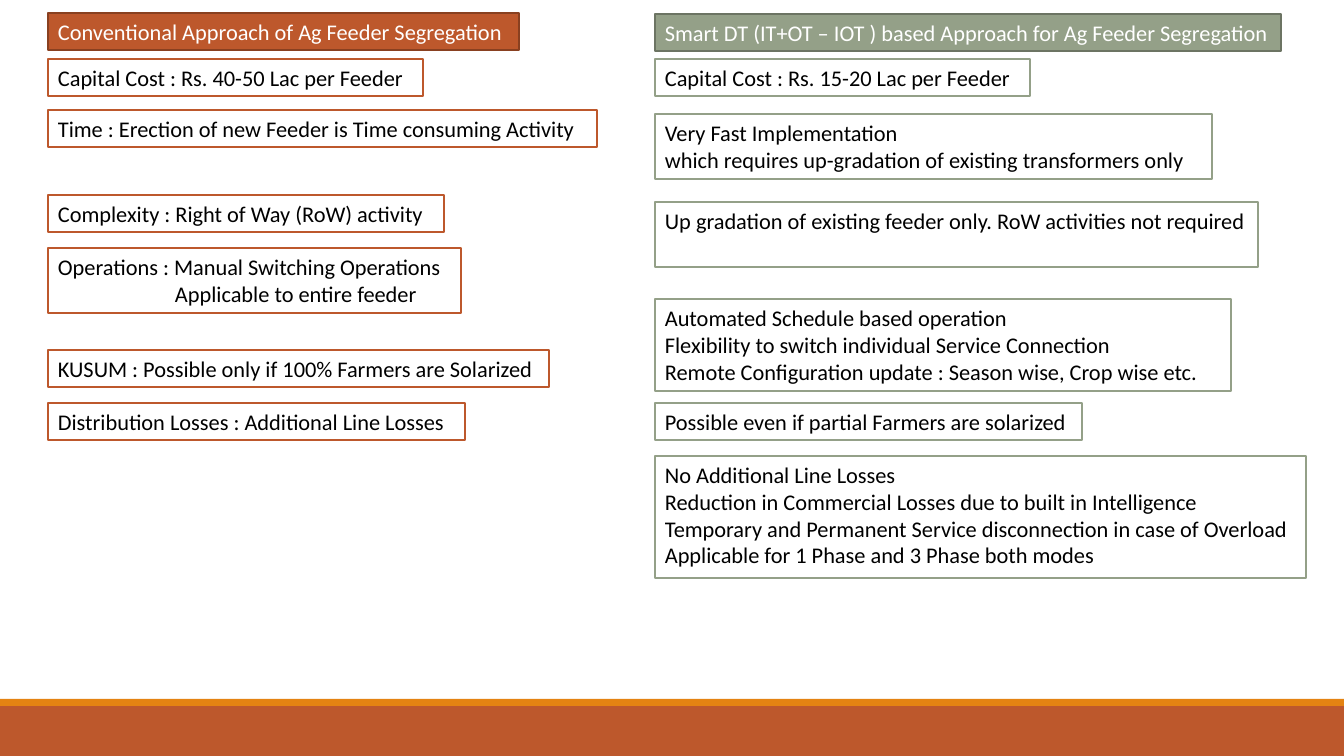
from dataclasses import dataclass

import pptx
import pptx.dml.color
import pptx.enum.shapes
import pptx.enum.text
import pptx.util

EMU_PER_PX = 914400 / 100.8


@dataclass(frozen=True)
class Theme:
    font: str = "Calibri"
    text_size: int = 16
    line_width: float = 1.25
    white: str = "FFFFFF"
    black: str = "000000"
    rust: str = "BD582C"
    dark_rust: str = "894020"
    sage: str = "94A088"
    dark_sage: str = "6C7463"
    orange: str = "E48312"


THEME = Theme()

CONVENTIONAL_LEFT = 48
CONVENTIONAL_HEADING = (13, 471, "Conventional Approach of Ag Feeder Segregation")
CONVENTIONAL_POINTS = [
    (59, 375, 37, ["Capital Cost : Rs. 40-50 Lac per Feeder"]),
    (110, 549, 37, ["Time : Erection of new Feeder is Time consuming Activity"]),
    (195, 396, 37, ["Complexity : Right of Way (RoW) activity"]),
    (248, 413, 65, ["Operations : Manual Switching Operations", "Applicable to entire feeder"]),
    (350, 501, 37, ["KUSUM : Possible only if 100% Farmers are Solarized"]),
    (403, 417, 37, ["Distribution Losses : Additional Line Losses"]),
]
CONVENTIONAL_HANGING = 117

SMART_LEFT = 655
SMART_HEADING = (14, 626, "Smart DT (IT+OT – IOT ) based Approach for Ag Feeder Segregation")
SMART_POINTS = [
    (59, 375, 37, ["Capital Cost : Rs. 15-20 Lac per Feeder"]),
    (114, 557, 65, [
        "Very Fast Implementation",
        "which requires up-gradation of existing transformers only",
    ]),
    (202, 603, 65, ["Up gradation of existing feeder only. RoW activities not required"]),
    (299, 576, 92, [
        "Automated Schedule based operation",
        "Flexibility to switch individual Service Connection",
        "Remote Configuration update : Season wise, Crop wise etc.",
    ]),
    (403, 427, 37, ["Possible even if partial Farmers are solarized"]),
    (456, 651, 122, [
        "No Additional Line Losses",
        "Reduction in Commercial Losses due to built in Intelligence",
        "Temporary and Permanent Service disconnection in case of Overload",
        "Applicable for 1 Phase and 3 Phase both modes",
    ]),
]


def px(length):
    return pptx.util.Emu(round(length * EMU_PER_PX))


def color(value):
    return pptx.dml.color.RGBColor.from_string(value)


def add_rectangle(slide, left, top, width, height, fill, line=None):
    shape = slide.shapes.add_shape(
        pptx.enum.shapes.MSO_SHAPE.RECTANGLE, px(left), px(top), px(width), px(height)
    )
    shape.shadow.inherit = False
    shape.fill.solid()
    shape.fill.fore_color.rgb = color(fill)
    if line:
        shape.line.color.rgb = color(line)
        shape.line.width = pptx.util.Pt(THEME.line_width)
    else:
        shape.line.fill.background()
    return shape


def add_text(shape, lines, text_color, hanging=0):
    frame = shape.text_frame
    frame.word_wrap = True
    frame.vertical_anchor = pptx.enum.text.MSO_ANCHOR.TOP
    frame.margin_left = frame.margin_right = pptx.util.Inches(0.1)
    frame.margin_top = frame.margin_bottom = pptx.util.Inches(0.05)
    for index, line in enumerate(lines):
        paragraph = frame.add_paragraph() if index else frame.paragraphs[0]
        paragraph.alignment = pptx.enum.text.PP_ALIGN.LEFT
        if index and hanging:
            paragraph._p.get_or_add_pPr().set("marL", str(px(hanging)))
        run = paragraph.add_run()
        run.text = line
        run.font.name = THEME.font
        run.font.size = pptx.util.Pt(THEME.text_size)
        run.font.color.rgb = color(text_color)


def add_column(slide, left, heading, points, accent, dark_accent, hanging=0):
    top, width, title = heading
    shape = add_rectangle(slide, left, top, width, 37, accent, dark_accent)
    add_text(shape, [title], THEME.white)
    for top, width, height, lines in points:
        shape = add_rectangle(slide, left, top, width, height, THEME.white, accent)
        add_text(shape, lines, THEME.black, hanging)


def main():
    presentation = pptx.Presentation()
    presentation.slide_width = px(1344)
    presentation.slide_height = px(756)
    slide = presentation.slides.add_slide(presentation.slide_layouts[6])
    add_rectangle(slide, 0, 706, 1344, 50, THEME.rust)
    add_rectangle(slide, 0, 699, 1344, 7, THEME.orange)
    add_column(
        slide, CONVENTIONAL_LEFT, CONVENTIONAL_HEADING, CONVENTIONAL_POINTS,
        THEME.rust, THEME.dark_rust, CONVENTIONAL_HANGING,
    )
    add_column(
        slide, SMART_LEFT, SMART_HEADING, SMART_POINTS, THEME.sage, THEME.dark_sage
    )
    presentation.save("out.pptx")


if __name__ == "__main__":
    main()
